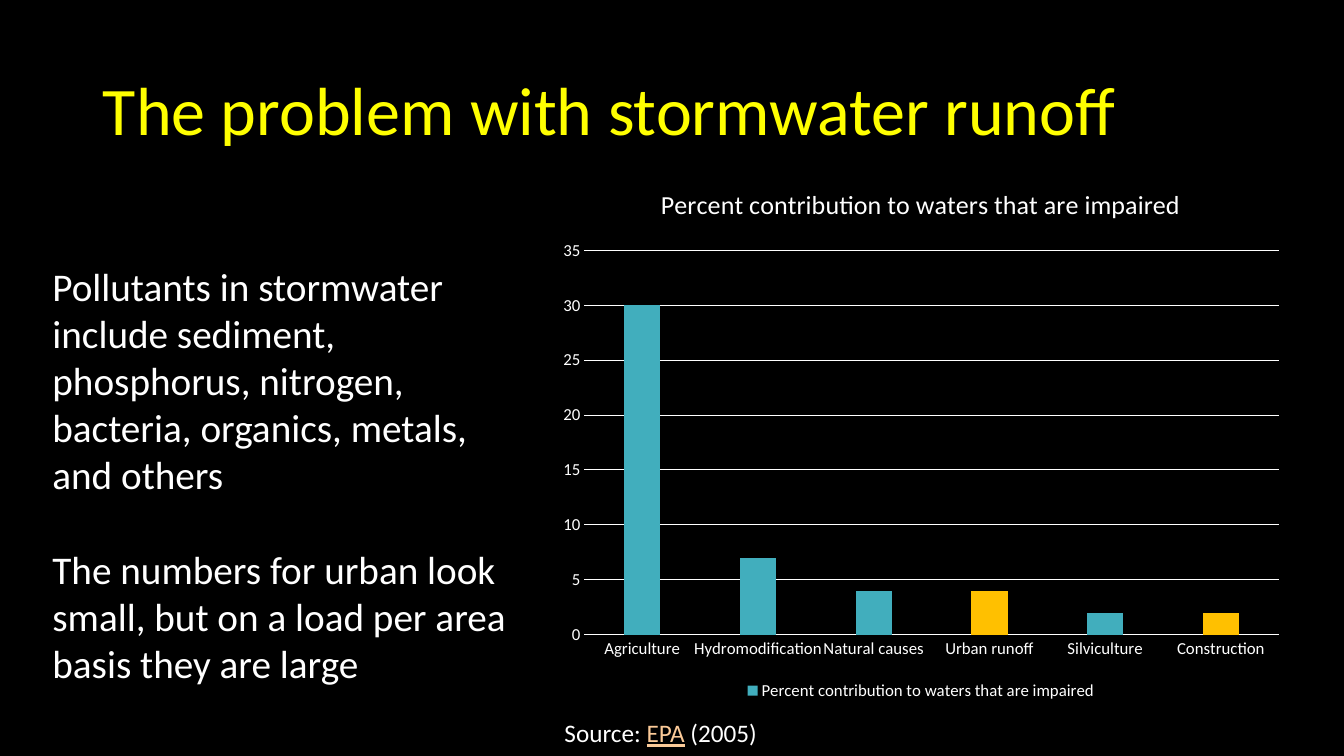
from pptx import Presentation
from pptx.chart.data import CategoryChartData
from pptx.dml.color import RGBColor
from pptx.enum.chart import XL_CHART_TYPE, XL_LEGEND_POSITION, XL_TICK_MARK
from pptx.enum.text import MSO_ANCHOR, MSO_AUTO_SIZE, PP_ALIGN
from pptx.oxml.ns import qn
from pptx.util import Inches, Pt
from lxml import etree

COLUMNS = XL_CHART_TYPE.COLUMN_CLUSTERED
LEGEND_BOTTOM = XL_LEGEND_POSITION.BOTTOM
NO_TICKS = XL_TICK_MARK.NONE
MIDDLE, TOP = MSO_ANCHOR.MIDDLE, MSO_ANCHOR.TOP
NO_AUTOFIT = MSO_AUTO_SIZE.NONE
LEFT = PP_ALIGN.LEFT

FONT = "Calibri"
BLACK, WHITE, YELLOW = "000000", "FFFFFF", "FFFF00"
TEAL, AMBER, PEACH = "41AEBD", "FFC000", "FBCA98"

MESSAGES = [
    "Pollutants in stormwater include sediment, phosphorus, nitrogen, "
    "bacteria, organics, metals, and others",
    "The numbers for urban look small, but on a load per area basis they are large",
]
CHART_TITLE = "Percent contribution to waters that are impaired"
CONTRIBUTIONS = {
    "Agriculture": 30,
    "Hydromodification": 7,
    "Natural causes": 4,
    "Urban runoff": 4,
    "Silviculture": 2,
    "Construction": 2,
}
URBAN_SOURCES = ("Urban runoff", "Construction")


def rgb(value):
    return RGBColor.from_string(value)


def style_font(font, size, color=WHITE):
    font.name = FONT
    font.size = Pt(size)
    font.bold = False
    font.color.rgb = rgb(color)


def style_line(line, color=WHITE):
    line.color.rgb = rgb(color)
    line.width = Pt(0.75)


def place(shape, left, top, width, height):
    shape.left, shape.top = Inches(left), Inches(top)
    shape.width, shape.height = Inches(width), Inches(height)


def fill_title(title, text):
    place(title, 0.92, 0.4, 11.5, 1.45)
    frame = title.text_frame
    frame.text = text
    frame.vertical_anchor = MIDDLE
    frame.auto_size = NO_AUTOFIT
    heading = frame.paragraphs[0]
    heading.alignment = LEFT
    heading.line_spacing = 0.9
    style_font(heading.runs[0].font, 48.6, YELLOW)


def fill_body(body, messages):
    place(body, 0.42, 2.55, 4.7, 4.34)
    frame = body.text_frame
    frame.text = "\n".join(messages)
    frame.vertical_anchor = TOP
    frame.auto_size = NO_AUTOFIT
    for index, message in enumerate(frame.paragraphs):
        # Plain paragraphs: no bullet, no indent
        properties = message._p.get_or_add_pPr()
        properties.set("marL", "0")
        properties.set("indent", "0")
        etree.SubElement(properties, qn("a:buNone"))
        message.alignment = LEFT
        message.space_before = Pt(34 if index else 0)
        style_font(message.runs[0].font, 28)


def add_contribution_chart(slide):
    data = CategoryChartData()
    data.categories = list(CONTRIBUTIONS)
    data.add_series(CHART_TITLE, list(CONTRIBUTIONS.values()))
    chart = slide.shapes.add_chart(
        COLUMNS, Inches(5.44), Inches(1.64), Inches(7.39), Inches(5.35), data
    ).chart
    style_font(chart.font, 10)

    # Title and legend
    chart.has_title = True
    heading = chart.chart_title.text_frame
    heading.text = CHART_TITLE
    style_font(heading.paragraphs[0].runs[0].font, 18.6)
    chart.chart_title.include_in_layout = False
    chart.has_legend = True
    chart.legend.position = LEGEND_BOTTOM
    chart.legend.include_in_layout = False
    style_font(chart.legend.font, 12)

    # Axes
    for axis in (chart.category_axis, chart.value_axis):
        axis.major_tick_mark = axis.minor_tick_mark = NO_TICKS
        style_font(axis.tick_labels.font, 12)
    style_line(chart.category_axis.format.line)
    percent_axis = chart.value_axis
    percent_axis.minimum_scale, percent_axis.maximum_scale = 0, 35
    percent_axis.major_unit = 5
    percent_axis.format.line.fill.background()
    style_line(percent_axis.major_gridlines.format.line)

    # Columns, with the urban sources highlighted
    plot = chart.plots[0]
    plot.gap_width, plot.overlap = 219, -27
    plot.vary_by_categories = False
    columns = plot.series[0]
    columns.format.fill.solid()
    columns.format.fill.fore_color.rgb = rgb(TEAL)
    for index, source in enumerate(CONTRIBUTIONS):
        if source in URBAN_SOURCES:
            fill = columns.points[index].format.fill
            fill.solid()
            fill.fore_color.rgb = rgb(AMBER)


def add_source(slide):
    box = slide.shapes.add_textbox(Inches(5.5), Inches(7.07), Inches(6.92), Inches(0.4))
    frame = box.text_frame
    frame.word_wrap = True
    citation = frame.paragraphs[0]
    for text, color in (("Source: ", WHITE), ("EPA", PEACH), (" (2005)", WHITE)):
        run = citation.add_run()
        run.text = text
        style_font(run.font, 18, color)
        run.font.underline = color == PEACH


def main():
    deck = Presentation()
    deck.slide_width, deck.slide_height = Inches(13.33), Inches(7.5)
    slide = deck.slides.add_slide(deck.slide_layouts[1])
    slide.background.fill.solid()
    slide.background.fill.fore_color.rgb = rgb(BLACK)

    fill_title(slide.shapes.title, "The problem with stormwater runoff")
    add_contribution_chart(slide)
    fill_body(slide.placeholders[1], MESSAGES)
    add_source(slide)
    deck.save("out.pptx")


if __name__ == "__main__":
    main()
